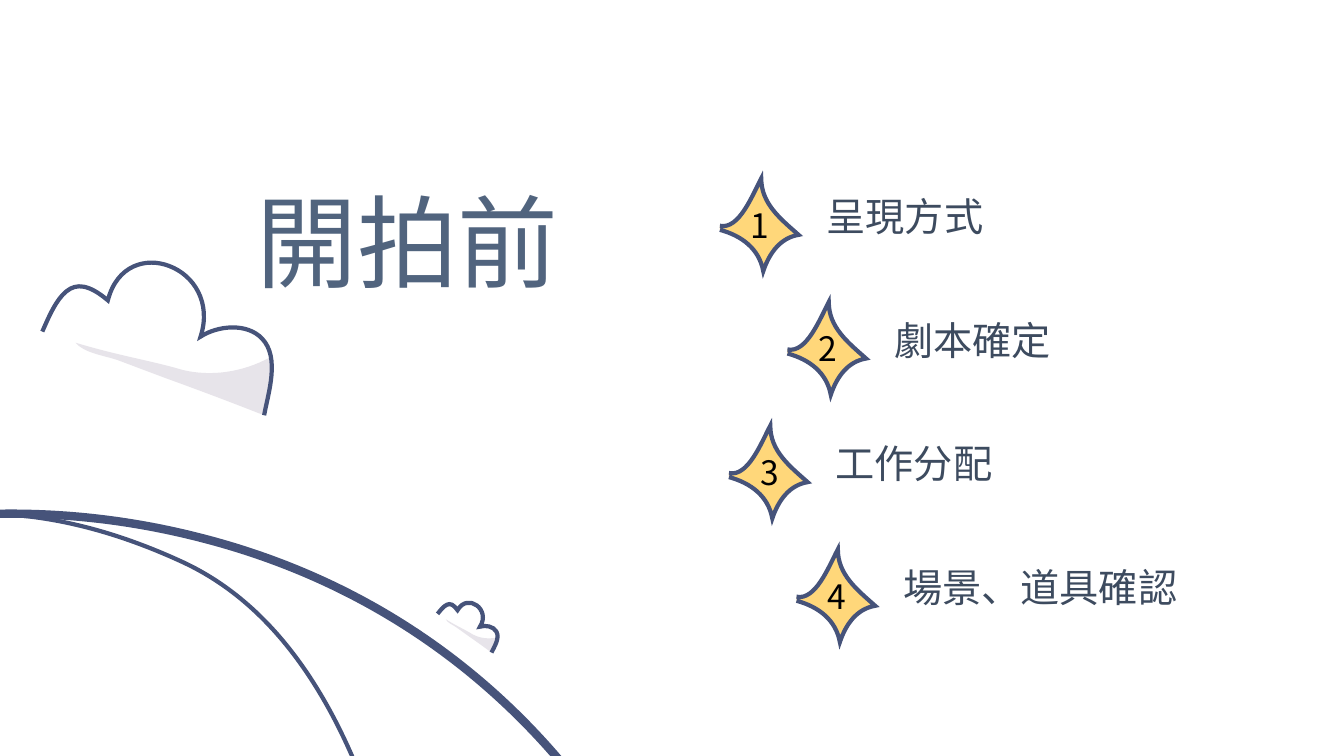
import math

from lxml import etree
from pptx import Presentation
from pptx.dml import color as dml
from pptx.enum import text as txt
from pptx.oxml import ns
from pptx.util import Inches, Pt

COLORS = {
    "title": "51647E",
    "label": "3D4B5F",
    "number": "000000",
    "outline": "46537A",
    "star": "FFD77A",
    "shade": "E7E4EA",
}
FONT = "Noto Sans CJK JP"

# Curves: a start point, then two control points and an end point per bend
STAR = [(0, 0.47), (0.19, 0.51), (0.32, 0.17), (0.41, 0),
        (0.41, 0.25), (0.6, 0.4), (0.78, 0.56),
        (0.6, 0.59), (0.49, 0.74), (0.43, 0.92),
        (0.39, 0.7), (0.22, 0.57), (0, 0.51)]
CLOUD_EDGE = [(0, 0), (0.07, -0.16), (0.14, -0.32), (0.24, -0.4),
              (0.34, -0.48), (0.46, -0.47), (0.65, -0.31),
              (0.74, -0.66), (1.03, -0.74), (1.26, -0.65),
              (1.5, -0.56), (1.68, -0.29), (1.57, 0.05),
              (1.74, -0.06), (2.03, -0.09), (2.18, 0.07),
              (2.36, 0.26), (2.24, 0.61), (2.2, 0.83)]
CLOUD_SHADE = [(0.33, 0.11), (0.76, 0.24), (1.09, 0.29), (1.39, 0.38),
               (1.68, 0.45), (1.99, 0.4), (2.25, 0.26),
               (2.31, 0.38), (2.2, 0.83), (2.2, 0.83),
               (1.87, 0.7), (1.55, 0.58), (1.22, 0.46),
               (1.06, 0.4), (0.9, 0.34), (0.74, 0.28),
               (0.62, 0.24), (0.41, 0.21), (0.33, 0.11)]
OUTER_HILL = [(6.49, 17.44), (8.7, 13.19), (7.28, 6.67), (1.97, 5.33),
              (-3.61, 3.91), (-9.01, 9.2), (-8.29, 14.56),
              (-7.35, 21.4), (1.33, 24.09), (5.68, 18.68),
              (5.99, 18.29), (6.26, 17.88), (6.49, 17.44)]
INNER_HILL = [(0.57, 21.23), (4.38, 19.99), (4.71, 13.79), (4.24, 10.47),
              (4.01, 8.83), (3.51, 6.37), (1.82, 5.58),
              (-3.5, 3.11), (-5.71, 10.71), (-5.37, 14.33),
              (-5.12, 17.07), (-2.92, 22.36), (0.57, 21.23)]


def bounds(points):
    """Return the two corners of the box around the chained cubic curves."""
    track = []
    for i in range(0, len(points) - 1, 3):
        for t in (step / 40 for step in range(41)):
            weights = ((1 - t) ** 3, 3 * t * (1 - t) ** 2, 3 * t * t * (1 - t), t ** 3)
            track.append([sum(w * p[axis] for w, p in zip(weights, points[i:i + 4]))
                          for axis in (0, 1)])
    xs, ys = zip(*track)
    return (Inches(min(xs)), Inches(min(ys))), (Inches(max(xs)), Inches(max(ys)))


def place(points, left, top, scale=1, turn=0):
    """Scale, turn by degrees and move a list of points."""
    cos = scale * math.cos(math.radians(turn))
    sin = scale * math.sin(math.radians(turn))
    return [(left + x * cos - y * sin, top + x * sin + y * cos) for x, y in points]


def set_fill(fill, color):
    if color:
        fill.solid()
        fill.fore_color.rgb = dml.RGBColor.from_string(COLORS[color])
    else:
        fill.background()


class Sketch:
    def __init__(self, slide):
        self.shapes = slide.shapes

    def group(self):
        return self.shapes.add_group_shape().shapes

    def curve(self, shapes, points, fill=None, line=None):
        start, end = bounds(points)
        builder = shapes.build_freeform(*start)
        builder.add_line_segments([end], close=False)
        outline = builder.convert_to_shape()

        # Put the cubic bends into the box
        bends = outline._element.find(".//" + ns.qn("a:path"))
        for command in list(bends):
            bends.remove(command)
        for i in range(0, len(points), 3):
            kind = "a:cubicBezTo" if i else "a:moveTo"
            command = etree.SubElement(bends, ns.qn(kind))
            for x, y in points[max(i - 2, 0):i + 1]:
                point = etree.SubElement(command, ns.qn("a:pt"))
                point.set("x", str(Inches(x) - start[0]))
                point.set("y", str(Inches(y) - start[1]))
        if points[0] == points[-1]:
            etree.SubElement(bends, ns.qn("a:close"))

        outline.shadow.inherit = False
        set_fill(outline.fill, fill)
        set_fill(outline.line.fill, line and "outline")
        if line:
            outline.line.width = Pt(line)
            pen = outline._element.spPr.find(ns.qn("a:ln"))
            etree.SubElement(pen, ns.qn("a:miter")).set("lim", "800000")

    def text(self, shapes, words, left, top, width, height, size, color,
             align=txt.PP_ALIGN.LEFT):
        box = shapes.add_textbox(*map(Inches, (left, top, width, height)))
        frame = box.text_frame
        frame.word_wrap = False
        frame.auto_size = txt.MSO_AUTO_SIZE.SHAPE_TO_FIT_TEXT
        paragraph = frame.paragraphs[0]
        paragraph.alignment = align
        run = paragraph.add_run()
        run.text = words
        run.font.size = Pt(size)
        set_fill(run.font.fill, color)
        run.font.name = FONT
        east_asian = etree.SubElement(run._r.get_or_add_rPr(), ns.qn("a:ea"))
        east_asian.set("typeface", FONT)

    def cloud(self, left, top, **fit):
        shapes = self.group()
        self.curve(shapes, place(CLOUD_SHADE, left, top, **fit), fill="shade")
        self.curve(shapes, place(CLOUD_EDGE, left, top, **fit), line=3)

    def step(self, number, label, left, top, label_width):
        self.text(self.shapes, label, left + 0.96, top + 0.09, label_width, 0.57,
                  size=28, color="label")
        shapes = self.group()
        self.curve(shapes, place(STAR, left, top), fill="star", line=3)
        self.text(shapes, str(number), left + 0.21, top + 0.21, 0.36, 0.5,
                  size=24, color="number")


def main():
    deck = Presentation()
    deck.slide_width, deck.slide_height = Inches(13.33), Inches(7.5)
    sketch = Sketch(deck.slides.add_slide(deck.slide_layouts[6]))

    # Title
    sketch.text(sketch.shapes, "開拍前", 2.41, 1.73, 3.23, 1.31,
                size=72, color="title", align=txt.PP_ALIGN.RIGHT)

    # Hills and clouds
    hills = sketch.group()
    sketch.curve(hills, OUTER_HILL, line=6)
    sketch.curve(hills, INNER_HILL, line=3)
    sketch.cloud(0.42, 3.29)
    sketch.cloud(4.34, 6.09, scale=0.28, turn=15)

    # Numbered steps, every second one indented
    steps = [("呈現方式", 1.77), ("劇本確定", 1.77), ("工作分配", 1.77), ("場景、道具確認", 2.95)]
    for i, (label, width) in enumerate(steps):
        left = 7.14 + 0.67 * (i % 2) + 0.09 * (i // 2)
        sketch.step(i + 1, label, left, 1.77 + 3.68 * i / 3, width)

    deck.save("out.pptx")


if __name__ == "__main__":
    main()
